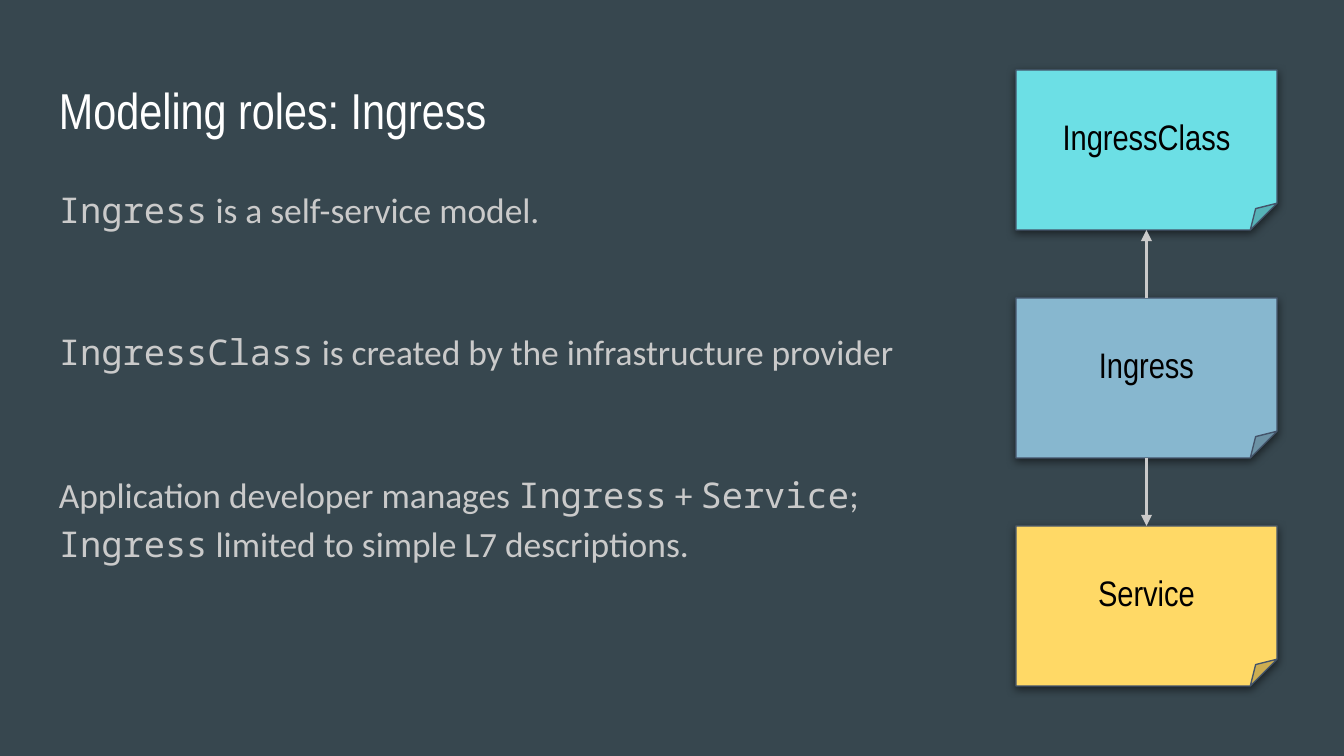
from lxml.etree import SubElement
from pptx import Presentation
from pptx.dml.color import RGBColor
from pptx.enum.shapes import MSO_CONNECTOR, MSO_SHAPE
from pptx.enum.text import MSO_ANCHOR, MSO_AUTO_SIZE, PP_ALIGN
from pptx.oxml.ns import qn
from pptx.util import Pt

PX = 914400 / 134.4
SLATE = RGBColor(0x37, 0x47, 0x4F)
WHITE = RGBColor(0xFF, 0xFF, 0xFF)
BLACK = RGBColor(0x00, 0x00, 0x00)
GREY = RGBColor(0xCA, 0xCA, 0xCA)
OUTLINE = RGBColor(0x44, 0x54, 0x6A)
CYAN = RGBColor(0x6C, 0xDF, 0xE5)
BLUE = RGBColor(0x87, 0xB7, 0xCF)
YELLOW = RGBColor(0xFF, 0xD9, 0x66)

HEADING_FONT = "Arial Narrow"
BODY_FONT = "Calibri"
CODE_FONT = "Noto Sans Mono"
TEXT_SIZE = 19

STATEMENTS = [
    "`Ingress` is a self-service model.",
    "`IngressClass` is created by the infrastructure provider",
    "Application developer manages `Ingress` + `Service`; "
    "`Ingress` limited to simple L7 descriptions.",
]
RESOURCES = [("IngressClass", CYAN), ("Ingress", BLUE), ("Service", YELLOW)]
NOTE_LEFT, NOTE_TOP, NOTE_WIDTH, NOTE_HEIGHT = 1016, 70, 261, 160
NOTE_PITCH = 228


def px(*lengths):
    return [round(length * PX) for length in lengths]


class SlideBuilder:
    def __init__(self, page):
        self.page = page
        page.background.fill.solid()
        page.background.fill.fore_color.rgb = SLATE

    def set_font(self, span, name, size, color):
        span.font.name = name
        span.font.size = Pt(size)
        span.font.color.rgb = color

    def set_frame(self, frame, inset, anchor):
        frame.word_wrap = True
        frame.auto_size = MSO_AUTO_SIZE.NONE
        frame.vertical_anchor = anchor
        inset, = px(inset)
        frame.margin_left = frame.margin_right = inset
        frame.margin_top = frame.margin_bottom = inset

    def title(self, text, *place):
        box = self.page.shapes.title
        box.left, box.top, box.width, box.height = px(*place)
        self.set_frame(box.text_frame, 13, MSO_ANCHOR.TOP)
        box.text_frame.text = text
        para = box.text_frame.paragraphs[0]
        para.alignment = PP_ALIGN.LEFT
        self.set_font(para.runs[0], HEADING_FONT, 27, WHITE)

    def body(self, statements, *place):
        """Write one paragraph per statement; backticks enclose code."""
        frame = self.page.shapes.add_textbox(*px(*place)).text_frame
        self.set_frame(frame, 13, MSO_ANCHOR.TOP)
        for index, statement in enumerate(statements):
            para = frame.add_paragraph() if index else frame.paragraphs[0]
            para.line_spacing = 1.15
            para.space_before = Pt(50 if index else 0)
            for part, text in enumerate(statement.split("`")):
                if text:
                    span = para.add_run()
                    span.text = text
                    font = CODE_FONT if part % 2 else BODY_FONT
                    self.set_font(span, font, TEXT_SIZE, GREY)

    def note(self, text, color, *place):
        shape = self.page.shapes.add_shape(MSO_SHAPE.FOLDED_CORNER, *px(*place))
        shape.fill.solid()
        shape.fill.fore_color.rgb = color
        shape.line.color.rgb = OUTLINE
        shape.line.width = Pt(0.75)
        self.drop_shadow(shape)
        self.set_frame(shape.text_frame, 9, MSO_ANCHOR.MIDDLE)
        shape.text_frame.text = text
        para = shape.text_frame.paragraphs[0]
        para.alignment = PP_ALIGN.CENTER
        self.set_font(para.runs[0], HEADING_FONT, TEXT_SIZE, BLACK)
        return shape

    def drop_shadow(self, shape):
        shape.shadow.inherit = False
        effects = shape._element.spPr.find(qn("a:effectLst"))
        shadow = SubElement(effects, qn("a:outerShdw"), blurRad=str(Pt(4.5)),
                            dist=str(Pt(1.5)), dir="5400000", algn="bl", rotWithShape="0")
        black = SubElement(shadow, qn("a:srgbClr"), val=str(BLACK))
        SubElement(black, qn("a:alpha"), val="50000")

    def arrow(self, start, start_site, end, end_site):
        line = self.page.shapes.add_connector(MSO_CONNECTOR.STRAIGHT, 0, 0, 0, 0)
        line.begin_connect(start, start_site)
        line.end_connect(end, end_site)
        line.line.color.rgb = GREY
        line.line.width = Pt(1.5)
        SubElement(line.line._get_or_add_ln(), qn("a:tailEnd"), type="triangle")
        SubElement(line._element.spPr, qn("a:effectLst"))


def main():
    deck = Presentation()
    deck.slide_width, deck.slide_height = px(1344, 756)
    slide = SlideBuilder(deck.slides.add_slide(deck.slide_layouts[5]))

    slide.title("Modeling roles: Ingress", 46, 66, 1253, 85)
    ingress_class, ingress, service = [
        slide.note(name, color, NOTE_LEFT, NOTE_TOP + row * NOTE_PITCH,
                   NOTE_WIDTH, NOTE_HEIGHT)
        for row, (name, color) in enumerate(RESOURCES)
    ]
    slide.arrow(ingress, 0, ingress_class, 2)
    slide.arrow(ingress, 2, service, 0)
    slide.body(STATEMENTS, 46, 169, 890, 503)

    deck.save("out.pptx")


if __name__ == "__main__":
    main()
